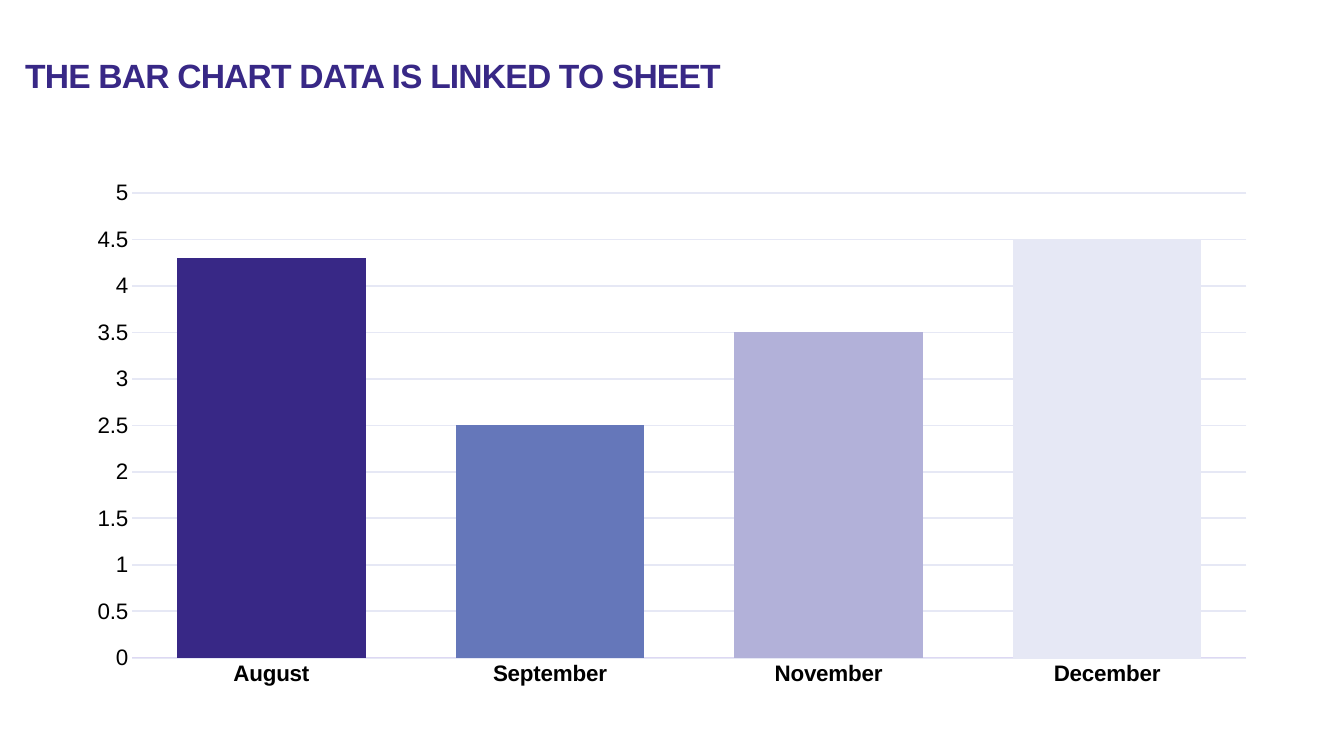
from dataclasses import dataclass

from pptx import Presentation
from pptx.chart.data import CategoryChartData
from pptx.dml.color import RGBColor
from pptx.enum.chart import XL_CHART_TYPE as ChartType, XL_TICK_MARK as TickMark
from pptx.enum.text import MSO_ANCHOR as Anchor, MSO_AUTO_SIZE as AutoSize, PP_ALIGN as Align
from pptx.util import Inches, Pt


@dataclass(frozen=True)
class Theme:
    font: str = "Arial"
    chart_font: str = "Lato"
    title_size: int = 24
    chart_size: int = 18
    axis_size: int = 16
    primary: str = "382886"
    text: str = "000000"
    axis_line: str = "DDD8F3"
    grid_line: str = "E6E8F5"
    bars: tuple = ("382886", "6577BA", "B2B1D9", "E6E8F5")


class SlideBuilder:
    """Places styled elements by inches on a 13.33 by 7.5 slide."""

    def __init__(self, presentation, theme):
        self.theme = theme
        self.slide = presentation.slides.add_slide(presentation.slide_layouts[5])

    def style_font(self, font, name, size, color, bold=False):
        font.name, font.size, font.bold = name, Pt(size), bold
        font.color.rgb = RGBColor.from_string(color)

    def style_line(self, line, color, width):
        line.color.rgb = RGBColor.from_string(color)
        line.width = Pt(width)

    def title(self, text, left, top, width, height):
        shape = self.slide.shapes.title
        shape.left, shape.top = Inches(left), Inches(top)
        shape.width, shape.height = Inches(width), Inches(height)
        frame = shape.text_frame
        frame.text = text
        frame.word_wrap = True
        frame.auto_size = AutoSize.NONE
        frame.vertical_anchor = Anchor.TOP
        frame.margin_left = frame.margin_top = frame.margin_right = 0
        frame.margin_bottom = Inches(0.05)
        paragraph = frame.paragraphs[0]
        paragraph.alignment = Align.LEFT
        paragraph.line_spacing = 0.9
        run = paragraph.runs[0]
        theme = self.theme
        self.style_font(run.font, theme.font, theme.title_size, theme.primary, bold=True)
        # Tighten the letter spacing by 0.6 points
        run.font._element.set("spc", "-60")

    def column_chart(self, values, left, top, width, height):
        theme = self.theme
        data = CategoryChartData()
        data.categories = list(values)
        data.add_series("Series 1", list(values.values()))
        chart = self.slide.shapes.add_chart(
            ChartType.COLUMN_CLUSTERED,
            Inches(left), Inches(top), Inches(width), Inches(height), data).chart
        chart.has_legend = chart.has_title = False
        self.style_font(chart.font, theme.chart_font, theme.chart_size, theme.primary)

        # Columns, one colour each
        plot = chart.plots[0]
        plot.gap_width, plot.overlap = 48, -27
        plot.vary_by_categories = False
        series = plot.series[0]
        series.format.fill.solid()
        series.format.fill.fore_color.rgb = RGBColor.from_string(theme.bars[0])
        for index, color in enumerate(theme.bars[1:], start=1):
            fill = series.points[index].format.fill
            fill.solid()
            fill.fore_color.rgb = RGBColor.from_string(color)

        # Axes and gridlines
        months, scale = chart.category_axis, chart.value_axis
        for axis, bold in ((months, True), (scale, False)):
            axis.major_tick_mark = axis.minor_tick_mark = TickMark.NONE
            self.style_font(axis.tick_labels.font, theme.font, theme.axis_size, theme.text, bold)
        self.style_line(months.format.line, theme.axis_line, 0.75)
        scale.format.line.fill.background()
        scale.minimum_scale, scale.maximum_scale, scale.major_unit = 0, 5, 0.5
        scale.has_major_gridlines = True
        self.style_line(scale.major_gridlines.format.line, theme.grid_line, 1.25)


def main():
    presentation = Presentation()
    presentation.slide_width, presentation.slide_height = Inches(13.33), Inches(7.5)
    builder = SlideBuilder(presentation, Theme())

    # Heading
    builder.title("THE BAR CHART DATA IS LINKED TO SHEET", 0.25, 0.59, 11.5, 0.94)

    # Monthly values
    monthly_values = {"August": 4.3, "September": 2.5, "November": 3.5, "December": 4.5}
    builder.column_chart(monthly_values, 0.73, 1.69, 11.87, 5.22)

    presentation.save("out.pptx")


if __name__ == "__main__":
    main()
